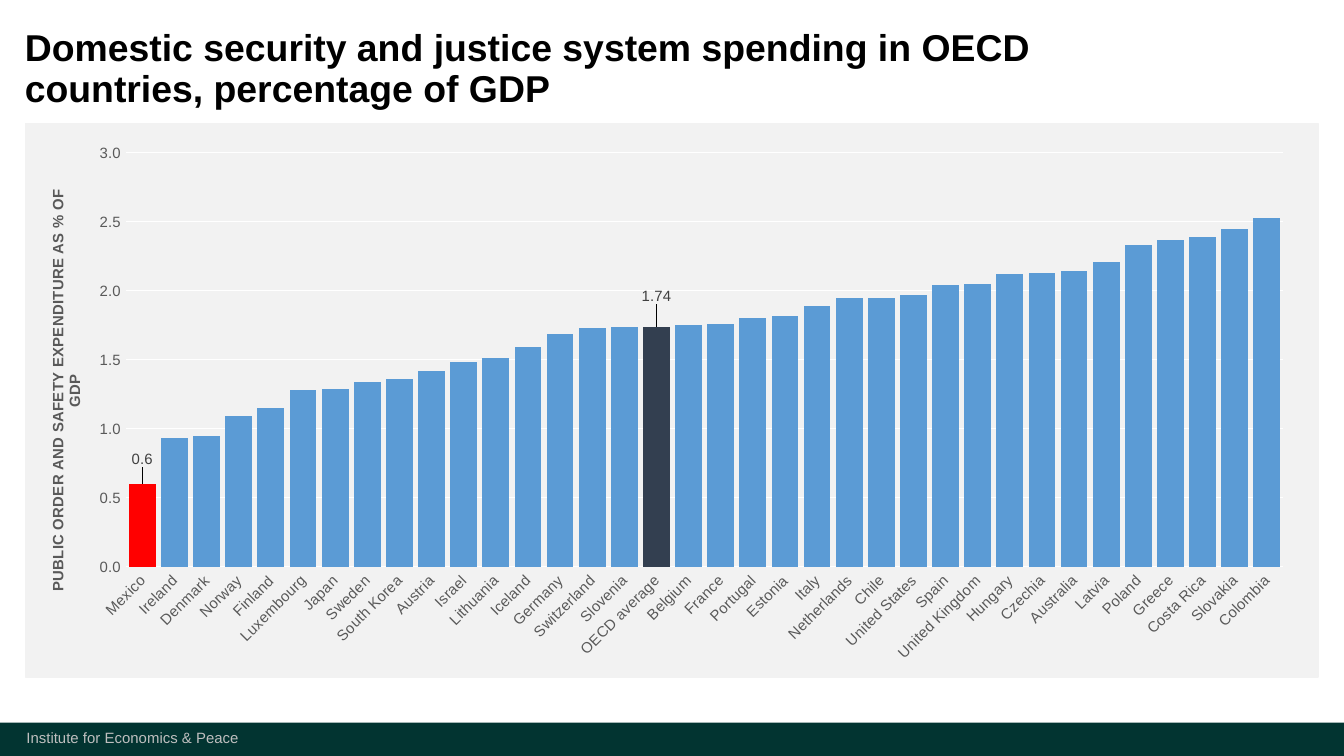
from lxml import etree
from pptx import Presentation
from pptx.chart.data import CategoryChartData
from pptx.dml.color import RGBColor
from pptx.enum.chart import XL_CHART_TYPE, XL_LABEL_POSITION, XL_TICK_MARK
from pptx.enum.shapes import MSO_SHAPE
from pptx.enum.text import MSO_ANCHOR
from pptx.oxml import parse_xml
from pptx.oxml.ns import nsdecls, qn
from pptx.util import Cm, Pt

TITLE = "Domestic security and justice system spending in OECD countries, percentage of GDP"
AXIS_TITLE = "PUBLIC ORDER AND SAFETY EXPENDITURE AS % OF GDP"
FOOTER = "Institute for Economics & Peace"
SPENDING = [
    ("Mexico", 0.6), ("Ireland", 0.93), ("Denmark", 0.95), ("Norway", 1.09),
    ("Finland", 1.15), ("Luxembourg", 1.28), ("Japan", 1.29), ("Sweden", 1.34),
    ("South Korea", 1.36), ("Austria", 1.42), ("Israel", 1.48), ("Lithuania", 1.51),
    ("Iceland", 1.59), ("Germany", 1.69), ("Switzerland", 1.73), ("Slovenia", 1.74),
    ("OECD average", 1.74), ("Belgium", 1.75), ("France", 1.76), ("Portugal", 1.8),
    ("Estonia", 1.82), ("Italy", 1.89), ("Netherlands", 1.95), ("Chile", 1.95),
    ("United States", 1.97), ("Spain", 2.04), ("United Kingdom", 2.05), ("Hungary", 2.12),
    ("Czechia", 2.13), ("Australia", 2.14), ("Latvia", 2.21), ("Poland", 2.33),
    ("Greece", 2.37), ("Costa Rica", 2.39), ("Slovakia", 2.45), ("Colombia", 2.53),
]
THEME = {
    "font": "Arial", "title_size": 20, "small_size": 8,
    "title": "000000", "axis": "595959", "label": "404040", "footer": "BFBFBF",
    "band": "023431", "panel": "F2F2F2", "grid": "FFFFFF",
    "bar": "5B9BD5", "mexico": "FF0000", "average": "333F50",
}
# country: (bar colour, upward shift of its label as a share of the chart height)
HIGHLIGHTS = {"Mexico": ("mexico", -0.02), "OECD average": ("average", -0.03)}


def rgb(key):
    return RGBColor.from_string(THEME[key])


def style(font, color, size="small_size", bold=False):
    font.name, font.size, font.bold = THEME["font"], Pt(THEME[size]), bold
    font.color.rgb = rgb(color)


def add_text(slide, text, box, color, size, bold=False, wrap=True):
    frame = slide.shapes.add_textbox(*map(Cm, box)).text_frame
    frame.word_wrap = wrap
    run = frame.paragraphs[0].add_run()
    run.text = text
    style(run.font, color, size, bold)
    return frame


def set_layout(parent, index, **values):
    """Give a chart part a manual layout, placed at the child index the schema wants."""
    for old in parent.findall(qn("c:layout")):
        parent.remove(old)
    layout = parse_xml(f"<c:layout {nsdecls('c')}><c:manualLayout/></c:layout>")
    for tag, value in values.items():
        etree.SubElement(layout[0], qn(f"c:{tag}")).set("val", str(value))
    parent.insert(index, layout)


def style_axes(chart):
    countries, share = chart.category_axis, chart.value_axis
    for axis in (countries, share):
        axis.major_tick_mark = axis.minor_tick_mark = XL_TICK_MARK.NONE
        style(axis.tick_labels.font, "axis")
    countries.has_major_gridlines = False
    countries._element.find(qn("c:txPr")).find(qn("a:bodyPr")).set("rot", "-2700000")
    share.minimum_scale, share.maximum_scale, share.major_unit = 0, 3, 0.5
    share.tick_labels.number_format = "#,##0.0"
    share.tick_labels.number_format_is_linked = False
    share.format.line.fill.background()
    for line in (countries.format.line, share.major_gridlines.format.line):
        line.color.rgb = rgb("grid")
        line.width = Pt(0.75)

    frame = share.axis_title.text_frame
    run = frame.paragraphs[0].add_run()
    run.text = AXIS_TITLE
    style(run.font, "axis", bold=True)
    body = frame._txBody.find(qn("a:bodyPr"))
    body.set("rot", "-5400000")
    body.set("vert", "horz")
    set_layout(share.axis_title._element, 1, xMode="edge", yMode="edge", x=0.015, y=0.115)


def style_bars(chart):
    plot = chart.plots[0]
    plot.vary_by_categories = False
    plot.gap_width, plot.overlap = 20, -27
    bars = plot.series[0]
    bars.invert_if_negative = False
    bars.format.fill.solid()
    bars.format.fill.fore_color.rgb = rgb("bar")
    bars.data_labels.show_value = False
    for index, (country, _) in enumerate(SPENDING):
        if country not in HIGHLIGHTS:
            continue
        color, shift = HIGHLIGHTS[country]
        point = bars.points[index]
        point.format.fill.solid()
        point.format.fill.fore_color.rgb = rgb(color)
        style(point.data_label.font, "label")
        point.data_label.position = XL_LABEL_POSITION.OUTSIDE_END
    labels = bars.data_labels._element
    for label, (_, shift) in zip(labels.findall(qn("c:dLbl")), HIGHLIGHTS.values()):
        set_layout(label, 1, x=0, y=shift)
    labels.append(parse_xml(
        f'<c:extLst {nsdecls("c", "a")}><c:ext uri="{{CE6537A1-D6FC-4f65-9D91-7224C49458BB}}" '
        'xmlns:c15="http://schemas.microsoft.com/office/drawing/2012/chart">'
        '<c15:showLeaderLines val="1"/><c15:leaderLines><c:spPr><a:ln w="9525"><a:solidFill>'
        f'<a:srgbClr val="{THEME["title"]}"/></a:solidFill></a:ln></c:spPr></c15:leaderLines>'
        '</c:ext></c:extLst>'))


def add_spending_chart(slide):
    data = CategoryChartData()
    data.categories = [country for country, _ in SPENDING]
    data.add_series("Series 1", [value for _, value in SPENDING])
    chart = slide.shapes.add_chart(XL_CHART_TYPE.COLUMN_CLUSTERED,
                                   *map(Cm, (0.47, 2.32, 24.45, 10.49)), data).chart
    chart.has_legend = chart.has_title = False
    style(chart.font, "title")
    style_axes(chart)
    style_bars(chart)
    area = chart._chartSpace.find(qn("c:chart"))
    set_layout(area.find(qn("c:plotArea")), 0, layoutTarget="inner", xMode="edge",
               yMode="edge", x=0.078, y=0.053, w=0.895, h=0.748)
    fill = f'<a:solidFill><a:srgbClr val="{THEME["panel"]}"/></a:solidFill>'
    area.addnext(parse_xml(
        f'<c:spPr {nsdecls("c", "a")}>{fill}<a:ln w="9525">{fill}</a:ln></c:spPr>'))


def main():
    deck = Presentation()
    deck.slide_width, deck.slide_height = Cm(25.4), Cm(14.29)
    slide = deck.slides.add_slide(deck.slide_layouts[6])

    band = slide.shapes.add_shape(MSO_SHAPE.RECTANGLE, *map(Cm, (0, 13.66, 25.4, 0.63)))
    band.shadow.inherit = False
    band.fill.solid()
    band.fill.fore_color.rgb = rgb("band")
    band.line.fill.background()
    footer = add_text(slide, FOOTER, (0.25, 13.64, 4.57, 0.61), "footer", "small_size", wrap=False)
    footer.vertical_anchor = MSO_ANCHOR.TOP

    title = add_text(slide, TITLE, (0.47, 0.56, 19.99, 0.76), "title", "title_size", bold=True)
    title.margin_left = title.margin_right = title.margin_top = title.margin_bottom = 0
    title.paragraphs[0].line_spacing = 0.9

    add_spending_chart(slide)
    deck.save("out.pptx")


if __name__ == "__main__":
    main()
